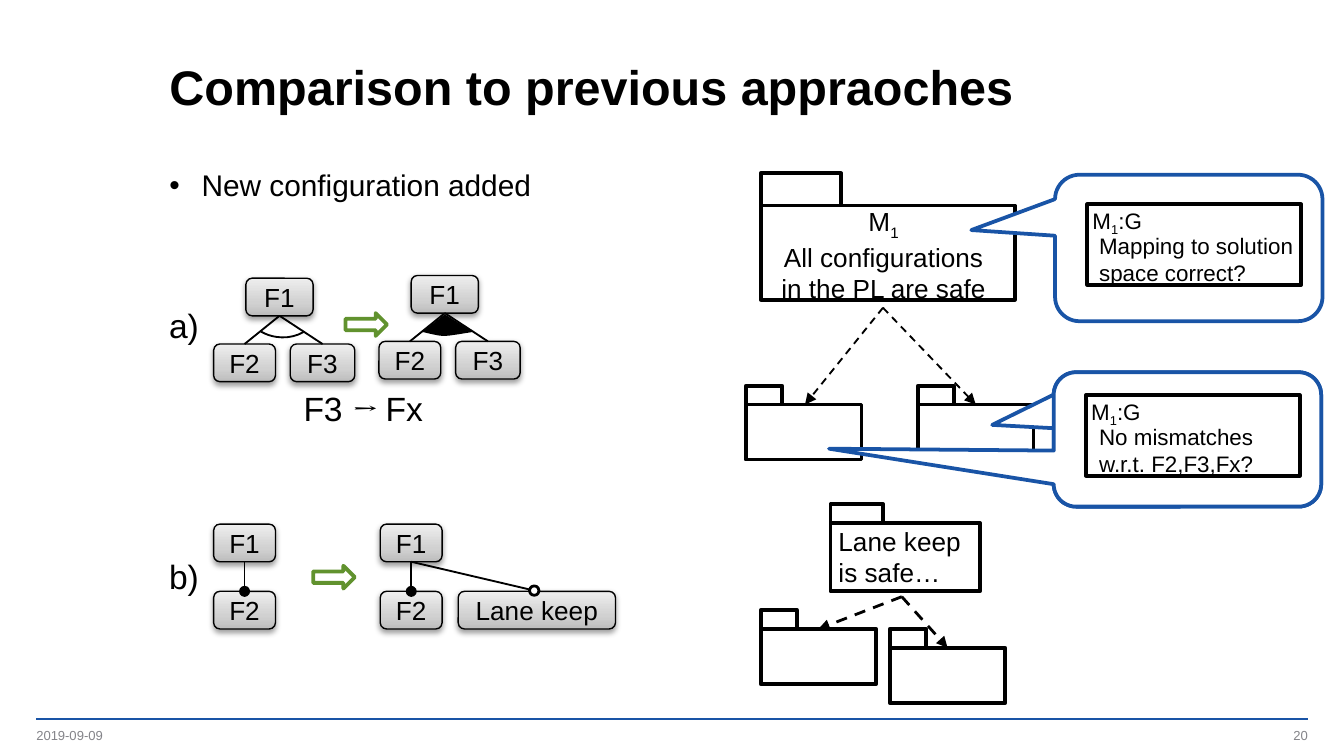
"""Build the slide that compares feature model changes with earlier approaches."""
from copy import deepcopy
from typing import NamedTuple

from lxml import etree
from pptx import Presentation
from pptx import util as u
from pptx.dml import color
from pptx.enum import dml, shapes, text
from pptx.oxml import ns

BLACK, WHITE, BLUE, GREEN, GREY = "000000", "FFFFFF", "1954A6", "61922E", "848489"
LEFT, CENTER, RIGHT = text.PP_ALIGN.LEFT, text.PP_ALIGN.CENTER, text.PP_ALIGN.RIGHT
Preset = shapes.MSO_SHAPE


class Box(NamedTuple):
    left: float
    top: float
    width: float
    height: float


class Run(NamedTuple):
    words: str
    font: str = "Arial"
    subscript: bool = False


class Folder(NamedTuple):
    body: Box
    tab_width: float
    tab_height: float


class Question(NamedTuple):
    bubble: Box
    tips: list
    frame: Box
    heading: Box
    body: Box
    words: str


class Link(NamedTuple):
    start: tuple
    end: tuple
    width: float


MODEL = [Run("M"), Run("1", subscript=True)]
SMALL_FOLDERS = [Folder(Box(left, top, 0.86, 0.41), 0.27, 0.14)
                 for left, top in ((5.55, 3.01), (6.83, 3.01), (5.66, 4.68), (6.62, 4.82))]
MODEL_FOLDER = Folder(Box(5.66, 1.53, 1.89, 0.7), 0.6, 0.24)
LANE_FOLDER = Folder(Box(6.18, 3.89, 1.11, 0.51), 0.39, 0.14)
DEPENDENCIES = [
    Link((6.57, 2.29), (5.99, 3.01), 1), Link((6.57, 2.29), (7.26, 3.01), 1),
    Link((6.71, 4.44), (6.09, 4.68), 1.5), Link((6.71, 4.44), (7.05, 4.82), 1.5)]
QUESTIONS = [
    Question(Box(7.85, 1.3, 1.99, 1.09), [(-0.813, -0.122)], Box(8.09, 1.52, 1.59, 0.6),
             Box(8.03, 1.49, 0.58, 0.3), Box(8.08, 1.68, 1.67, 0.5),
             "Mapping to solution space correct?"),
    Question(Box(7.84, 2.77, 1.99, 1), [(-0.73, -0.108), (-1.34, 0.069)],
             Box(8.08, 2.94, 1.59, 0.6), Box(8.02, 2.91, 0.58, 0.3),
             Box(8.08, 3.1, 1.67, 0.5), "No mismatches w.r.t. F2,F3,Fx?")]


def rgb(value: str) -> color.RGBColor:
    return color.RGBColor.from_string(value)


def write(frame, paragraphs: list, size: float, ink: str = BLACK,
          align=LEFT, bold: bool = False) -> None:
    for index, runs in enumerate(paragraphs):
        paragraph = frame.add_paragraph() if index else frame.paragraphs[0]
        paragraph.alignment = align
        for part in runs:
            run = paragraph.add_run()
            run.text = part.words
            run.font.name, run.font.size, run.font.bold = part.font, u.Pt(size), bold
            run.font.color.rgb = rgb(ink)
            if part.subscript:
                run.font._element.set("baseline", "-25000")


def place(holder, box: Box) -> None:
    holder.left, holder.top, holder.width, holder.height = map(u.Inches, box)


def label(slide, box: Box, paragraphs: list, size: float, ink: str = BLACK,
          align=LEFT, wrap: bool = True, margin: bool = True) -> None:
    frame = slide.shapes.add_textbox(*map(u.Inches, box)).text_frame
    frame.word_wrap = wrap
    if not margin:
        frame.margin_left = frame.margin_right = frame.margin_top = frame.margin_bottom = 0
        frame.vertical_anchor = text.MSO_ANCHOR.MIDDLE
    write(frame, paragraphs, size, ink, align)


def paint(shape, fill: str | None, line: str, width: float) -> None:
    shape.shadow.inherit = False
    if fill:
        shape.fill.solid()
        shape.fill.fore_color.rgb = rgb(fill)
    else:
        shape.fill.background()
    shape.line.color.rgb = rgb(line)
    shape.line.width = u.Pt(width)


def figure(slide, preset, box: Box, fill: str | None = WHITE, line: str = BLACK,
           width: float = 2, adjust: tuple = ()):
    shape = slide.shapes.add_shape(preset, *map(u.Inches, box))
    paint(shape, fill, line, width)
    for index, value in enumerate(adjust):
        shape.adjustments[index] = value
    return shape


def connect(slide, link: Link, end: str = "", dashed: bool = False, ink: str = BLACK) -> None:
    connector = slide.shapes.add_connector(
        shapes.MSO_CONNECTOR.STRAIGHT, *map(u.Inches, link.start + link.end))
    connector.line.color.rgb = rgb(ink)
    connector.line.width = u.Pt(link.width)
    if dashed:
        connector.line.dash_style = dml.MSO_LINE.DASH
    if end:
        etree.SubElement(connector.line._get_or_add_ln(), ns.qn("a:tailEnd"), type=end)
    etree.SubElement(connector._element.spPr, ns.qn("a:effectLst"))


def feature(slide, box: Box, name: str) -> None:
    shape = figure(slide, Preset.ROUNDED_RECTANGLE, box, width=0.75)
    shape.fill.gradient()
    shape.fill.gradient_angle = 90
    first = shape._element.spPr.find(".//" + ns.qn("a:gs"))
    first.addnext(deepcopy(first))
    for stop, position, shade in zip(shape.fill.gradient_stops, (0, 0.35, 1),
                                     ("BDBDBD", "D1D1D1", "EEEEEE")):
        stop.position, stop.color.rgb = position, rgb(shade)
    effects = shape._element.spPr.find(ns.qn("a:effectLst"))
    shadow = etree.SubElement(effects, ns.qn("a:outerShdw"), blurRad=str(u.Pt(3.1)),
                              dist=str(u.Pt(1.6)), dir="5400000", rotWithShape="0")
    shade = etree.SubElement(shadow, ns.qn("a:srgbClr"), val=BLACK)
    etree.SubElement(shade, ns.qn("a:alpha"), val="38000")
    frame = shape.text_frame
    frame.margin_left = frame.margin_right = frame.margin_top = frame.margin_bottom = 0
    frame.vertical_anchor = text.MSO_ANCHOR.MIDDLE
    write(frame, [[Run(name)]], 14, align=CENTER)


def choice_tree(slide, left: float, top: float) -> None:
    feature(slide, Box(left + 0.24, top, 0.5, 0.28), "F1")
    feature(slide, Box(left, top + 0.49, 0.46, 0.28), "F2")
    feature(slide, Box(left + 0.57, top + 0.49, 0.48, 0.28), "F3")
    for offset in (0.23, 0.81):
        connect(slide, Link((left + 0.49, top + 0.28), (left + offset, top + 0.49), 1))


def mandatory_tree(slide, left: float, top: float) -> None:
    feature(slide, Box(left, top, 0.46, 0.28), "F1")
    feature(slide, Box(left, top + 0.5, 0.46, 0.28), "F2")
    connect(slide, Link((left + 0.23, top + 0.28), (left + 0.23, top + 0.5), 1), "oval")


def or_wedge(slide) -> None:
    corners = ((3.52, 2.47), (3.27, 2.51), (3.32, 2.51), (3.14, 2.47))
    steps = [step / 12 for step in range(13)]
    rim = [tuple(u.Inches((1 - t) ** 3 * a + 3 * (1 - t) ** 2 * t * b
                          + 3 * (1 - t) * t ** 2 * c + t ** 3 * d)
                 for a, b, c, d in zip(*corners)) for t in steps]
    builder = slide.shapes.build_freeform(u.Inches(3.31), u.Inches(2.34))
    builder.add_line_segments(rim)
    wedge = builder.convert_to_shape()
    paint(wedge, BLACK, BLACK, 1)
    wedge.line.fill.background()


def folder(slide, item: Folder) -> None:
    figure(slide, Preset.FLOWCHART_PROCESS, item.body)
    figure(slide, Preset.RECTANGLE, Box(item.body.left, item.body.top - item.tab_height,
                                        item.tab_width, item.tab_height))


def question(slide, item: Question) -> None:
    for tip in item.tips:
        figure(slide, Preset.ROUNDED_RECTANGULAR_CALLOUT, item.bubble, line=BLUE,
               adjust=tip + (0.167,))
    figure(slide, Preset.FLOWCHART_PROCESS, item.frame)
    label(slide, item.body, [[Run(item.words)]], 12)
    label(slide, item.heading, [MODEL + [Run(":G")]], 12, wrap=False)


def main() -> None:
    deck = Presentation()
    deck.slide_width, deck.slide_height = u.Inches(10), u.Inches(10 * 9 / 16)
    slide = deck.slides.add_slide(deck.slide_layouts[1])
    title, topics = slide.placeholders
    place(title, Box(1.16, 0.28, 8.26, 0.74))
    place(topics, Box(1.16, 1.22, 8.27, 3.95))
    for holder, words, size, bold in ((title, "Comparison to previous appraoches", 26, True),
                                      (topics, "New configuration added", 16, False)):
        holder.text_frame.auto_size = text.MSO_AUTO_SIZE.NONE
        write(holder.text_frame, [[Run(words)]], size, bold=bold)
    title.text_frame.vertical_anchor = text.MSO_ANCHOR.MIDDLE
    title.text_frame.paragraphs[0].line_spacing = u.Pt(30)
    topic = topics.text_frame.paragraphs[0]
    topic.line_spacing, topic.space_before, topic.space_after = 0.9, u.Pt(0), u.Pt(2)
    topic._p.get_or_add_pPr().set("marL", str(u.Inches(0.24)))
    topic._p.get_or_add_pPr().set("indent", str(u.Inches(-0.24)))

    connect(slide, Link((0.27, 5.35), (9.73, 5.35), 1), ink=BLUE)
    for left, words, align in ((0.27, "2019-09-09", LEFT), (7.48, "20", RIGHT)):
        label(slide, Box(left, 5.41, 2.25, 0.13), [[Run(words)]], 7, GREY, align, margin=False)
    for top, words in ((2.22, "a)"), (4.09, "b)")):
        label(slide, Box(1.16, top, 0.43, 0.4), [[Run(words)]], 18, wrap=False)

    choice_tree(slide, 1.59, 2.07)
    arc = figure(slide, Preset.ARC, Box(1.78, 1.87, 0.62, 0.65), None, width=1,
                 adjust=(174.6, 210.57))
    arc.rotation = 127.5
    or_wedge(slide)
    choice_tree(slide, 2.82, 2.05)
    for left in (1.59, 2.83):
        mandatory_tree(slide, left, 3.9)
    feature(slide, Box(3.41, 4.4, 1.17, 0.28), "Lane keep")
    connect(slide, Link((3.06, 4.18), (4, 4.4), 1))
    figure(slide, Preset.OVAL, Box(3.94, 4.36, 0.07, 0.07), width=1.5)
    for left, top in ((2.57, 2.33), (2.33, 4.21)):
        figure(slide, Preset.RIGHT_ARROW, Box(left, top, 0.31, 0.17), line=GREEN)
    label(slide, Box(2.16, 2.84, 1.12, 0.4),
          [[Run("F3 "), Run("→ ", "Cambria"), Run("Fx")]], 18, wrap=False)

    for item in [MODEL_FOLDER, LANE_FOLDER] + SMALL_FOLDERS:
        folder(slide, item)
    label(slide, Box(5.66, 1.48, 1.83, 0.81),
          [MODEL, [Run("All configurations in the PL are safe")]], 14, align=CENTER)
    label(slide, Box(6.14, 3.86, 1.15, 0.57), [[Run("Lane keep")], [Run("is safe…")]], 14)
    for link in DEPENDENCIES:
        connect(slide, link, "triangle", dashed=True)
    for item in QUESTIONS:
        question(slide, item)
    deck.save("out.pptx")


if __name__ == "__main__":
    main()
